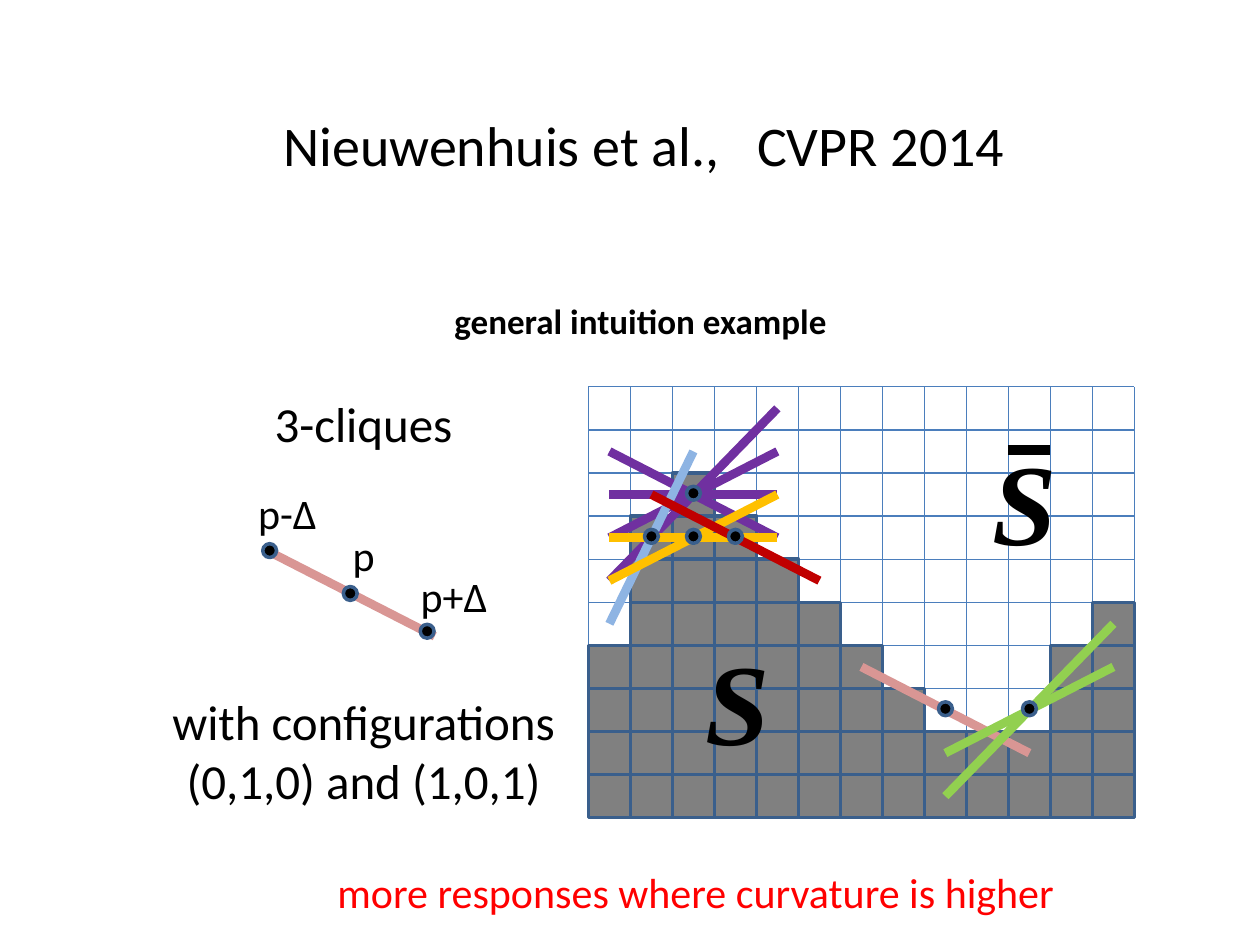
import pptx
import pptx.util
import pptx.dml.color
import pptx.enum.shapes
import pptx.enum.text
import pptx.oxml.ns
import lxml.etree

Inches, Pt = pptx.util.Inches, pptx.util.Pt
SHAPE = pptx.enum.shapes.MSO_SHAPE
ALIGN = pptx.enum.text.PP_ALIGN

THEME = {
    "black": "000000", "red": "FF0000", "grid": "4B7EBC", "edge": "3A5F8C",
    "segment": "808080", "purple": "7030A0", "blue": "8EB4E3",
    "yellow": "FFC000", "crimson": "C00000", "pink": "D99694", "green": "92D050",
    "body_font": "Calibri", "math_font": "Times New Roman",
    "title": 32, "body": 28, "label": 24, "heading": 20, "symbol": 66,
}

deck = pptx.Presentation()
deck.slide_width, deck.slide_height = Inches(10), Inches(7.5)
slide = deck.slides.add_slide(deck.slide_layouts[6])
shapes = slide.shapes


def rgb(name):
    return pptx.dml.color.RGBColor.from_string(THEME[name])


def add_text(text, left, top, width, height, size="label", color="black",
             font="body_font", bold=False, italic=False, align=ALIGN.LEFT,
             gap=0, tab=None):
    """Add one text box; gap is the space in points before the second line."""
    box = shapes.add_textbox(Inches(left), Inches(top), Inches(width), Inches(height))
    frame = box.text_frame
    frame.word_wrap = tab is not None
    frame.text = text
    for index, paragraph in enumerate(frame.paragraphs):
        paragraph.alignment = align
        if gap and index == 1:
            paragraph.space_before = Pt(gap)
        if tab:
            qn = pptx.oxml.ns.qn
            stops = lxml.etree.SubElement(paragraph._p.get_or_add_pPr(), qn("a:tabLst"))
            lxml.etree.SubElement(stops, qn("a:tab"), pos=str(Inches(tab)), algn="l")
        for run in paragraph.runs:
            run.font.name = THEME[font]
            run.font.size = Pt(THEME[size])
            run.font.bold, run.font.italic = bold, italic
            run.font.color.rgb = rgb(color)


def add_line(x1, y1, x2, y2, color, weight):
    line = shapes.add_connector(pptx.enum.shapes.MSO_CONNECTOR.STRAIGHT,
                                Inches(x1), Inches(y1), Inches(x2), Inches(y2))
    line.line.color.rgb = rgb(color)
    line.line.width = Pt(weight)
    lxml.etree.SubElement(line._element.spPr, pptx.oxml.ns.qn("a:effectLst"))


# Pixel grid
LEFT, TOP, CELL_W, CELL_H = 4.67, 3.07, 1 / 3, 0.342
COLUMN_HEIGHTS = [4, 7, 8, 7, 6, 5, 4, 3, 2, 2, 2, 4, 5]
COLUMNS, ROWS = len(COLUMN_HEIGHTS), 10
RIGHT, BOTTOM = LEFT + COLUMNS * CELL_W, TOP + ROWS * CELL_H
for row in range(ROWS + 1):
    y = TOP + row * CELL_H
    add_line(LEFT, y, RIGHT, y, "grid", 0.75)
for column in range(COLUMNS + 1):
    x = LEFT + column * CELL_W
    add_line(x, TOP, x, BOTTOM, "grid", 0.75)

# Each filled cell and each pixel dot: preset, left, top, width, height, fill
cells = [(SHAPE.RECTANGLE, LEFT + column * CELL_W, TOP + row * CELL_H,
          CELL_W, CELL_H, "segment")
         for column, height in enumerate(COLUMN_HEIGHTS)
         for row in range(ROWS - height, ROWS)]

DOT = 0.11
legend_centers = [(2.14, 4.37), (2.78, 4.71), (3.39, 5.01)]
dot_pixels = [(1, 3), (2, 3), (3, 3), (2, 2), (8, 7), (10, 7)]
dot_centers = legend_centers + [
    (LEFT + (column + 0.5) * CELL_W, TOP + (row + 0.5) * CELL_H - 0.01)
    for column, row in dot_pixels]
dots = [(SHAPE.OVAL, x - DOT / 2, y - DOT / 2, DOT, DOT, "black")
        for x, y in dot_centers]

# Cliques: color, center pixel, step from the center in pixels
cliques = [
    ("purple", 2, 2, 2, 0), ("purple", 2, 2, 2, -1),
    ("purple", 2, 2, 2, 1), ("purple", 2, 2, 2, -2),
    ("blue", 1, 3, 1, -2),
    ("yellow", 2, 3, 2, 0), ("yellow", 2, 3, 2, -1),
    ("crimson", 3, 3, 2, 1),
    ("pink", 8, 7, 2, 1),
    ("green", 10, 7, 2, -1), ("green", 10, 7, 2, -2),
]

# Cells lie under the cliques, dots above them
for layer in (cells, dots):
    for preset, left, top, width, height, fill in layer:
        mark = shapes.add_shape(preset, Inches(left), Inches(top),
                                Inches(width), Inches(height))
        mark.shadow.inherit = False
        mark.fill.solid()
        mark.fill.fore_color.rgb = rgb(fill)
        mark.line.color.rgb = rgb("edge")
        mark.line.width = Pt(2)
    if layer is cells:
        add_line(3.45, 5.05, 2.12, 4.37, "pink", 5)
        for color, column, row, dx, dy in cliques:
            x, y = LEFT + (column + 0.5) * CELL_W, TOP + (row + 0.5) * CELL_H
            add_line(x - dx * CELL_W, y - dy * CELL_H,
                     x + dx * CELL_W, y + dy * CELL_H, color, 5)

# Segment S and its complement
for left, top in [(5.5, 4.95), (7.78, 3.36)]:
    add_text("S", left, top, 0.72, 1.21, size="symbol", font="math_font",
             bold=True, italic=True)
add_line(8, 3.57, 8.33, 3.57, "black", 5.75)

# Clique legend
add_text("3-cliques\nwith configurations\n(0,1,0) and (1,0,1)", 1.21, 3.07, 3.35, 3.45,
         size="body", align=ALIGN.CENTER, gap=137)
for label, left, top, width in [("p", 2.7, 4.15, 0.38), ("p+Δ", 3.24, 4.48, 0.75),
                                ("p-Δ", 1.95, 3.82, 0.69)]:
    add_text(label, left, top, width, 0.5)

# Title, heading and conclusion
add_text("Nieuwenhuis et al.,\tCVPR 2014", 2.15, 0.83, 5.99, 0.64, size="title", tab=3.76)
add_text("general intuition example", 3.48, 2.33, 3.18, 0.44, size="heading",
         bold=True, align=ALIGN.RIGHT)
add_text("more responses where curvature is higher", 2.58, 6.83, 5.97, 0.5, color="red")

deck.save("out.pptx")
